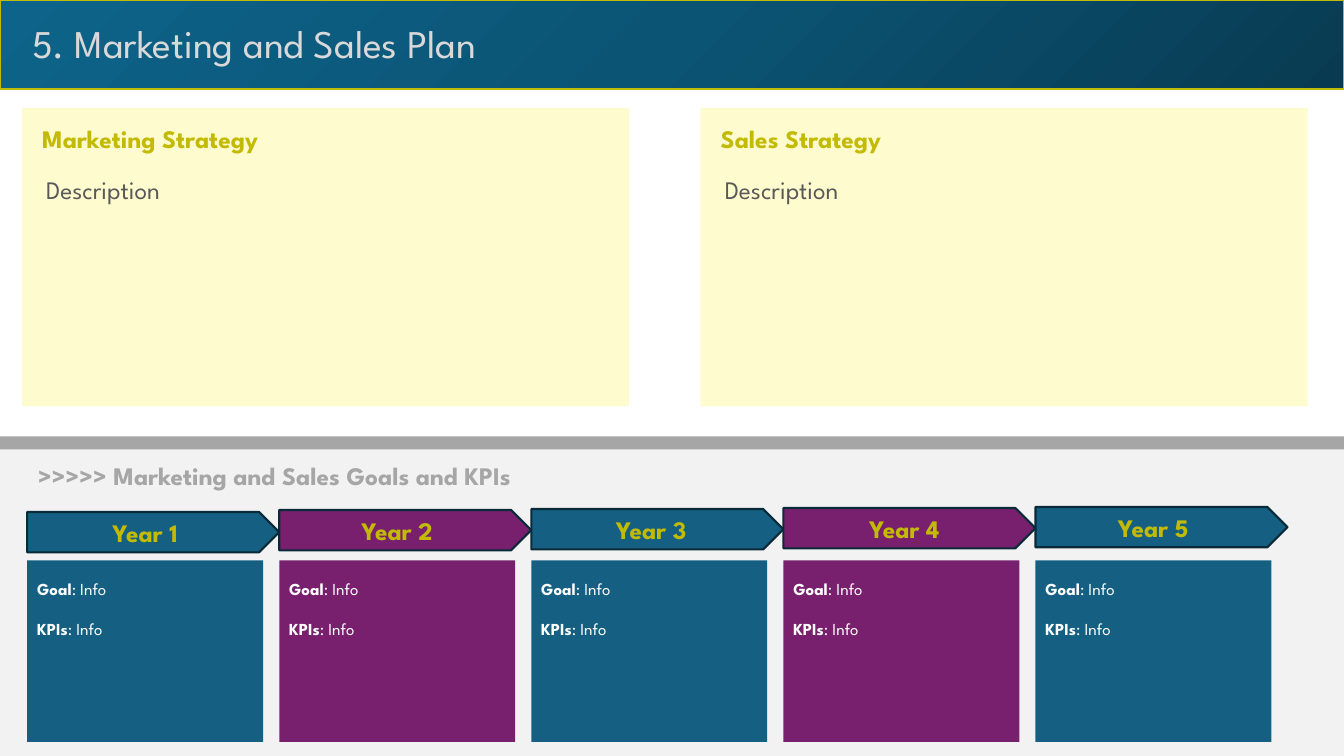
"""Build the marketing and sales plan slide."""
from copy import deepcopy
from dataclasses import dataclass

from pptx import Presentation, util as u
from pptx.dml.color import RGBColor
from pptx.enum import shapes, text


@dataclass(frozen=True)
class Theme:
    """Hold the colours, font and type sizes."""
    font: str = "League Spartan"
    title: int = 28
    head: int = 18
    small: int = 12
    gap: int = 14
    blue: str = "156082"
    plum: str = "78206E"
    navy: str = "092A39"
    gold: str = "C3BA05"
    cream: str = "FEFCCE"
    pale: str = "F2F2F2"
    grey: str = "A6A6A6"
    silver: str = "D9D9D9"
    ink: str = "595959"
    white: str = "FFFFFF"
    fade: tuple = ("083B52", "0B5474", "0D638A")


class Deck:
    """Draw styled elements on the current slide."""

    def __init__(self, theme):
        """Open a wide deck with one blank slide."""
        self.theme = theme
        self.prs = Presentation()
        self.prs.slide_width = u.Inches(13.33)
        self.prs.slide_height = u.Inches(7.5)
        self.slide = self.prs.slides.add_slide(self.prs.slide_layouts[6])

    def shape(self, box, fill, line=None, kind=shapes.MSO_SHAPE.RECTANGLE):
        """Add a flat shape with an optional outline."""
        item = self.slide.shapes.add_shape(kind, *map(u.Inches, box))
        item.shadow.inherit = False
        item.fill.solid()
        item.fill.fore_color.rgb = RGBColor.from_string(fill)
        if line:
            item.line.color.rgb = RGBColor.from_string(line)
            item.line.width = u.Pt(1.5)
        else:
            item.line.fill.background()
        return item

    def banner(self, box, line):
        """Add a bar with the diagonal three-colour fade."""
        bar = self.shape(box, self.theme.fade[0], line)
        bar.fill.gradient()
        bar.fill.gradient_angle = 135
        first = bar.fill.gradient_stops[0]
        stops = bar._element.spPr.gradFill.gsLst
        stops.insert(1, deepcopy(stops[0]))
        for rank, (stop, tint) in enumerate(zip(bar.fill.gradient_stops, self.theme.fade)):
            stop.position = rank / 2
            stop.color.rgb = RGBColor.from_string(tint)

    def label(self, box, lines, size, color, bold=False, align=None, gap=0):
        """Add text; each line is a string or a list of (words, bold) runs."""
        item = self.slide.shapes.add_textbox(*map(u.Inches, box))
        frame = item.text_frame
        frame.word_wrap = True
        frame.auto_size = text.MSO_AUTO_SIZE.SHAPE_TO_FIT_TEXT
        for rank, line in enumerate(lines):
            para = frame.add_paragraph() if rank else frame.paragraphs[0]
            para.alignment = align
            para.space_before = u.Pt(gap if rank else 0)
            font = para.font
            font.name, font.size, font.bold = self.theme.font, u.Pt(size), bold
            font.color.rgb = RGBColor.from_string(color)
            for words, heavy in [(line, bold)] if isinstance(line, str) else line:
                run = para.add_run()
                run.text = words
                run.font.bold = heavy

    def panel(self, left, head):
        """Add a strategy panel with its heading and description."""
        t = self.theme
        self.shape((left, 1.07, 6.02, 2.96), t.cream)
        self.label((left + 0.1, 1.17, 4.01, 0.4), [head], t.head, t.gold, True)
        self.label((left + 0.14, 1.68, 3.77, 0.4), ["Description"], t.head, t.ink)

    def year(self, rank, top, shift):
        """Add one year's arrow, heading and goal card."""
        t = self.theme
        left = 0.27 + 2.5 * rank
        fill = t.plum if rank % 2 else t.blue
        self.shape((left, top, 2.5, 0.4), fill, t.navy, shapes.MSO_SHAPE.PENTAGON)
        self.label((left + shift, top, 2.34, 0.4), [f"Year {rank + 1}"],
                   t.head, t.gold, True, text.PP_ALIGN.CENTER)
        self.shape((left, 5.56, 2.34, 1.8), fill)
        lines = [[(name, True), (": Info", False)] for name in ("Goal", "KPIs")]
        self.label((left, 5.69, 2.34, 0.71), lines, t.small, t.white, gap=t.gap)


def main():
    """Compose and save the slide."""
    t = Theme()
    deck = Deck(t)
    deck.shape((0, 4.38, 13.33, 3.12), t.pale)
    deck.shape((0, 4.33, 13.33, 0.13), t.grey)
    deck.banner((0, 0, 13.33, 0.88), t.gold)
    deck.label((0.22, 0.14, 8.08, 0.57), ["5. Marketing and Sales Plan"], t.title, t.silver)
    deck.panel(0.22, "Marketing Strategy")
    deck.panel(6.95, "Sales Strategy")
    deck.label((0.28, 4.52, 6.95, 0.4), [">>>>> Marketing and Sales Goals and KPIs"],
               t.head, t.grey, True)
    tops = (5.08, 5.06, 5.05, 5.04, 5.03)
    shifts = (0, 0, 0.02, 0.03, 0)
    for rank, (top, shift) in enumerate(zip(tops, shifts)):
        deck.year(rank, top, shift)
    deck.prs.save("out.pptx")


if __name__ == "__main__":
    main()
